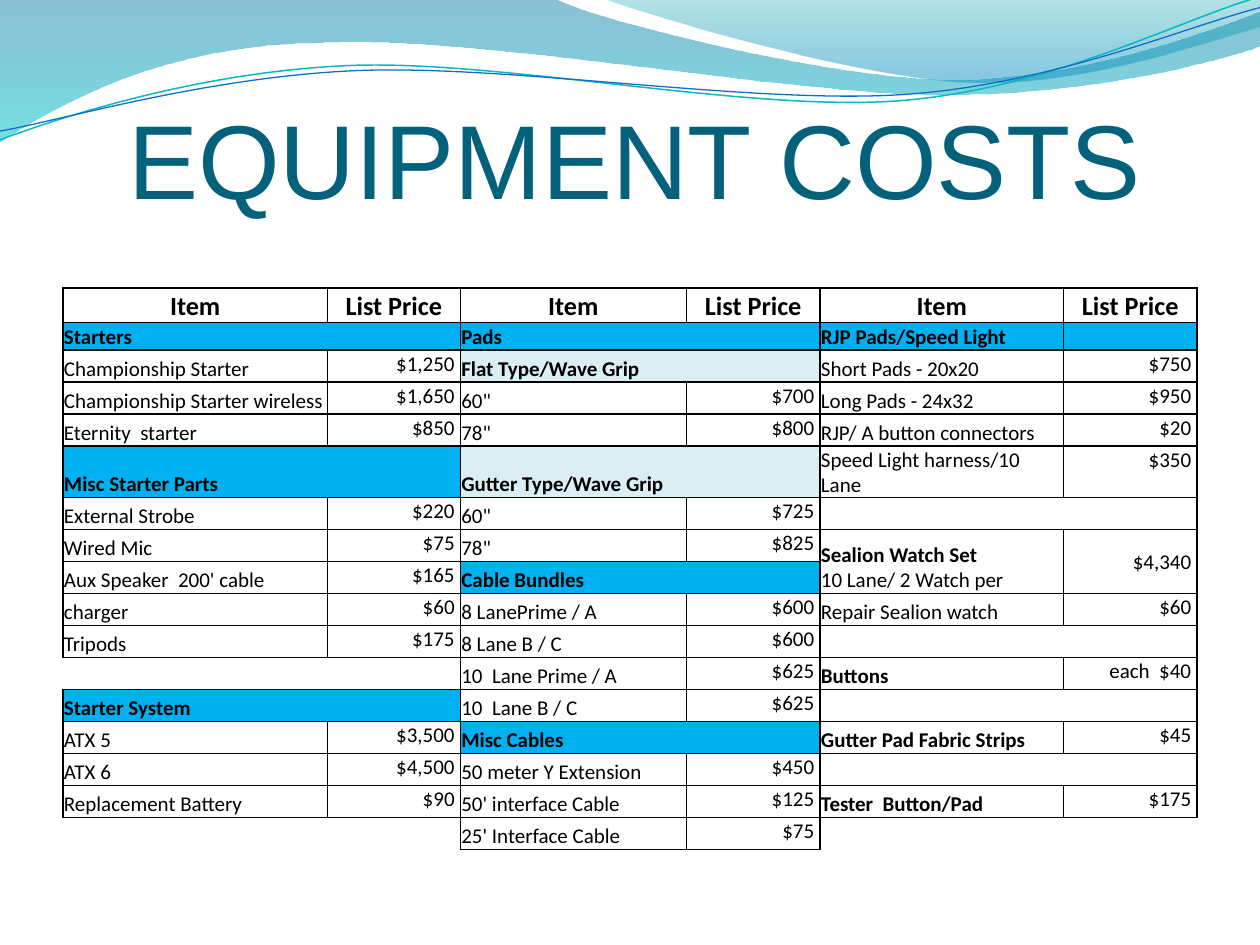
"""Build the equipment costs slide with its wave header and price table."""
import math

import pptx
import pptx.dml.color
import pptx.enum.text
import pptx.oxml
import pptx.oxml.ns
import pptx.util

Cm = pptx.util.Cm
Pt = pptx.util.Pt
ALIGN = pptx.enum.text.PP_ALIGN
ANCHOR = pptx.enum.text.MSO_ANCHOR
INCH = 2.54
TILT = 2.7

COLOURS = {
    "title": "04617B", "text": "000000", "band": "00B0F0", "tint": "DAEEF3",
    "deep": "0074A1", "aqua": "00C6CF", "teal": "00A1A9", "sky": "008BBF",
    "cyan line": "0AB8BF", "blue line": "0F6FC6",
}

FILLED_WAVES = [
    ([(0, -0.01), (4.4, -0.01), (4.76, 0.17, 6.64, 0.63, 7.58, 0.63),
      (8.53, 0.63, 9.58, 0.26, 10, 0.09), (10.01, 0.36),
      (9.83, 0.44, 8.7, 0.76, 7.46, 0.75), (6.22, 0.75, 3.82, 0.28, 2.57, 0.34),
      (1.29, 0.35, 0.46, 0.83, -0.01, 1.13)],
     [("deep", 0, 45), ("aqua", 1, 55)]),
    ([(4.79, -0.01), (5.09, 0.11, 6.82, 0.62, 7.69, 0.65),
      (8.56, 0.69, 9.61, 0.32, 10, 0.21), (10, 0)],
     [("teal", 0, 30), ("sky", 0.8, 45)]),
]
LINE_WAVES = [
    ([(0, 1.11), (0.48, 0.93, 1.58, 0.57, 2.77, 0.52),
      (3.95, 0.47, 5.93, 0.89, 7.13, 0.8), (8.33, 0.71, 9.38, 0.15, 9.98, -0.02)],
     (4.99, 0.57), "cyan line", 0.85),
    ([(0, 1.04), (0.47, 0.96, 1.64, 0.61, 2.83, 0.56),
      (4.03, 0.51, 5.97, 0.83, 7.17, 0.75), (8.36, 0.67, 9.41, 0.21, 10, 0.06)],
     (4.99, 0.59), "blue line", 0.75),
]

COLUMN_WIDTHS = [5.33, 2.68, 4.56, 2.69, 4.91, 2.69]
ROW_HEIGHTS = [0.69, 0.56] + [9.68 / 15] * 15
HEADER = ("Item", "List Price", "header")
BLANK = ("", None, "plain")
STARTERS = [
    HEADER, ("Starters", None, "band"),
    ("Championship Starter", "$1,250", "plain"),
    ("Championship Starter wireless", "$1,650", "plain"),
    ("Eternity  starter", "$850", "plain"),
    ("Misc Starter Parts", None, "band"),
    ("External Strobe", "$220", "plain"), ("Wired Mic", "$75", "plain"),
    ("Aux Speaker  200' cable", "$165", "plain"), ("charger", "$60", "plain"),
    ("Tripods", "$175", "plain"), BLANK, ("Starter System", None, "band"),
    ("ATX 5", "$3,500", "plain"), ("ATX 6", "$4,500", "plain"),
    ("Replacement Battery", "$90", "plain"), BLANK,
]
PADS = [
    HEADER, ("Pads", None, "band"), ("Flat Type/Wave Grip", None, "tint"),
    ('60"', "$700", "plain"), ('78"', "$800", "plain"),
    ("Gutter Type/Wave Grip", None, "tint"),
    ('60"', "$725", "plain"), ('78"', "$825", "plain"),
    ("Cable Bundles", None, "band"),
    ("8 LanePrime / A", "$600", "plain"), ("8 Lane B / C", "$600", "plain"),
    ("10  Lane Prime / A", "$625", "plain"), ("10  Lane B / C", "$625", "plain"),
    ("Misc Cables", None, "band"), ("50 meter Y Extension", "$450", "plain"),
    ("50' interface Cable", "$125", "plain"), ("25' Interface Cable", "$75", "plain"),
]
LIGHTS = [
    HEADER, ("RJP Pads/Speed Light", "", "band"),
    ("Short Pads - 20x20", "$750", "plain"), ("Long Pads - 24x32", "$950", "plain"),
    ("RJP/ A button connectors", "$20", "plain"),
    ("Speed Light harness/10 Lane", "$350", "plain"), BLANK,
    ("Sealion Watch Set\n10 Lane/ 2 Watch per", "$4,340", "bold"), ("", "", "plain"),
    ("Repair Sealion watch", "$60", "plain"), BLANK,
    ("Buttons", "each  $40", "bold"), BLANK,
    ("Gutter Pad Fabric Strips", "$45", "bold"), BLANK,
    ("Tester  Button/Pad", "$175", "bold"), BLANK,
]
WATCH_ROW = 7


def turn(points, centre, degrees):
    """Return the points turned clockwise about the centre."""
    cos, sin = math.cos(math.radians(degrees)), math.sin(math.radians(degrees))
    offsets = [(x - centre[0], y - centre[1]) for x, y in points]
    return [(centre[0] + x * cos - y * sin, centre[1] + x * sin + y * cos)
            for x, y in offsets]


class Painter:
    """Hold the style and the current slide."""

    def __init__(self, page, colours):
        """Keep the page and its palette."""
        self.page = page
        self.colours = colours

    def rgb(self, name):
        """Return a palette colour."""
        return pptx.dml.color.RGBColor.from_string(self.colours[name])

    def span(self, para, text, size, font, colour, bold=False):
        """Add one styled run."""
        span = para.add_run()
        span.text = text
        span.font.size, span.font.name, span.font.bold = Pt(size), font, bold
        span.font.color.rgb = self.rgb(colour)

    def title(self, text, left, top, width, height):
        """Add the centred heading."""
        box = self.page.shapes.add_textbox(Cm(left), Cm(top), Cm(width), Cm(height))
        frame = box.text_frame
        frame.word_wrap = True
        frame.vertical_anchor = ANCHOR.BOTTOM
        frame.margin_left = frame.margin_right = frame.margin_bottom = 0
        para = frame.paragraphs[0]
        para.alignment = ALIGN.CENTER
        self.span(para, text, 60, "Arial", "title")

    def outline(self, segments, close, centre=(0, 0), degrees=0):
        """Add a freeform of lines and cubic curves."""
        knots = [segment[i:i + 2] for segment in segments
                 for i in range(0, len(segment), 2)]
        start, *rest = [(Cm(x * INCH), Cm(y * INCH))
                        for x, y in turn(knots, centre, degrees)]
        builder = self.page.shapes.build_freeform(*start)
        builder.add_line_segments(rest, close=close)
        shape = builder.convert_to_shape()
        shape.shadow.inherit = False
        steps = iter(list(shape._element.iter(pptx.oxml.ns.qn("a:lnTo"))))
        for segment in segments[1:]:
            group = [next(steps) for _ in range(len(segment) // 2)]
            if len(group) == 3:
                curve = pptx.oxml.parse_xml(
                    f'<a:cubicBezTo {pptx.oxml.ns.nsdecls("a")}/>')
                group[0].addprevious(curve)
                for step in group:
                    curve.append(step[0])
                    step.getparent().remove(step)
        return shape

    def filled_wave(self, segments, stops):
        """Add a wave with a translucent vertical gradient."""
        shape = self.outline(segments, True)
        shape.line.fill.background()
        shape.fill.gradient()
        shape.fill.gradient_angle = 270
        for stop, (name, position, _) in zip(shape.fill.gradient_stops, stops):
            stop.color.rgb = self.rgb(name)
            stop.position = position
        inks = shape._element.spPr.iter(pptx.oxml.ns.qn("a:srgbClr"))
        for ink, (_, _, opacity) in zip(list(inks), stops):
            ink.append(pptx.oxml.parse_xml(
                f'<a:alpha {pptx.oxml.ns.nsdecls("a")} val="{opacity * 1000}"/>'))

    def line_wave(self, segments, centre, colour, width):
        """Add a thin tilted wave."""
        shape = self.outline(segments, False, centre, TILT)
        shape.rotation = 360 - TILT
        shape.fill.background()
        shape.line.color.rgb = self.rgb(colour)
        shape.line.width = Pt(width)

    def borders(self, cell, shown):
        """Draw or hide the left, right, top and bottom edges."""
        ink = f'<a:solidFill><a:srgbClr val="{self.colours["text"]}"/></a:solidFill>'
        for place, (side, show) in enumerate(zip("LRTB", shown)):
            cell._tc.get_or_add_tcPr().insert(place, pptx.oxml.parse_xml(
                f'<a:ln{side} {pptx.oxml.ns.nsdecls("a")} w="12700">'
                f'{ink if show else "<a:noFill/>"}</a:ln{side}>'))

    def cell(self, cell, text, style, align, anchor):
        """Fill one cell, with bold on the first line only."""
        cell.margin_left = cell.margin_right = cell.margin_top = Cm(0.02)
        cell.margin_bottom = 0
        cell.vertical_anchor = anchor
        if style in ("band", "tint"):
            cell.fill.solid()
            cell.fill.fore_color.rgb = self.rgb(style)
        else:
            cell.fill.background()
        para = cell.text_frame.paragraphs[0]
        para.alignment = align
        if not text:
            para._p.append(pptx.oxml.parse_xml(
                f'<a:endParaRPr {pptx.oxml.ns.nsdecls("a")} sz="1200"/>'))
            return
        for number, line in enumerate(text.split("\n")):
            if number:
                para.add_line_break()
            bold = number == 0 and style != "plain" and align != ALIGN.RIGHT
            self.span(para, line, 15 if style == "header" else 12, "Calibri", "text", bold)

    def price_table(self, groups, left, top):
        """Add the table of item and price pairs."""
        last = len(ROW_HEIGHTS) - 1
        table = self.page.shapes.add_table(
            len(ROW_HEIGHTS), len(COLUMN_WIDTHS), Cm(left), Cm(top),
            Cm(sum(COLUMN_WIDTHS)), Cm(sum(ROW_HEIGHTS))).table
        table.first_row = table.horz_banding = False
        for column, width in zip(table.columns, COLUMN_WIDTHS):
            column.width = Cm(width)
        for row, height in zip(table.rows, ROW_HEIGHTS):
            row.height = Cm(height)
        for index, group in enumerate(groups):
            for row, (item, price, style) in enumerate(group):
                joined, blank = price is None, (item, price, style) == BLANK
                ends, header = blank and row == last, style == "header"
                first, second = (table.cell(row, 2 * index + side) for side in (0, 1))
                align = ALIGN.CENTER if header else ALIGN.LEFT
                self.cell(first, item, style, align, ANCHOR.BOTTOM)
                anchor = (ANCHOR.BOTTOM if header else
                          ANCHOR.MIDDLE if "\n" in item else ANCHOR.TOP)
                amount = price if header or not price else f"{price} "
                self.cell(second, amount, style, align if header else ALIGN.RIGHT, anchor)
                self.borders(first, (not (blank and index == 0), not joined, True, not ends))
                self.borders(second, (not joined, not (ends and index == 2), True, not ends))
        for column in (4, 5):
            table.cell(WATCH_ROW, column).merge(table.cell(WATCH_ROW + 1, column))


def main():
    """Build and save the deck."""
    deck = pptx.Presentation()
    deck.slide_width, deck.slide_height = Cm(25.4), Cm(19.05)
    painter = Painter(deck.slides.add_slide(deck.slide_layouts[6]), COLOURS)
    for wave in FILLED_WAVES:
        painter.filled_wave(*wave)
    for wave in LINE_WAVES:
        painter.line_wave(*wave)
    painter.title("EQUIPMENT COSTS", 1.27, 1.96, 23.06, 2.49)
    painter.price_table([STARTERS, PADS, LIGHTS], 1.27, 5.81)
    deck.save("out.pptx")


if __name__ == "__main__":
    main()
